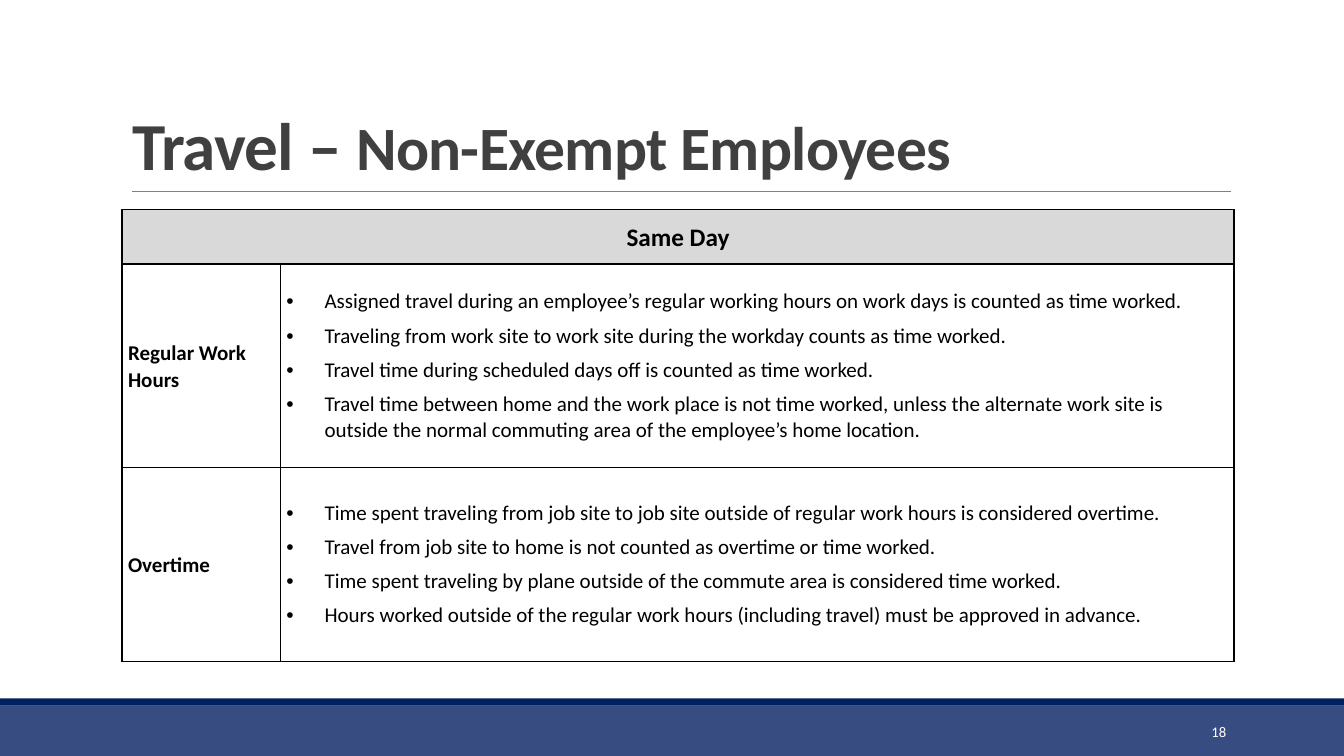
"""Builds the same-day travel slide for non-exempt employees."""
from dataclasses import dataclass

from lxml import etree
from pptx import Presentation
from pptx.dml.color import RGBColor
from pptx.enum.shapes import MSO_CONNECTOR, MSO_SHAPE
from pptx.enum.text import MSO_ANCHOR, MSO_AUTO_SIZE, PP_ALIGN
from pptx.oxml.ns import qn
from pptx.util import Inches, Pt

LEFT, CENTER, RIGHT = PP_ALIGN.LEFT, PP_ALIGN.CENTER, PP_ALIGN.RIGHT
MIDDLE, BOTTOM = MSO_ANCHOR.MIDDLE, MSO_ANCHOR.BOTTOM
RECTANGLE, STRAIGHT = MSO_SHAPE.RECTANGLE, MSO_CONNECTOR.STRAIGHT
NO_AUTOFIT = MSO_AUTO_SIZE.NONE
TITLE_ONLY = 5


@dataclass(frozen=True)
class Theme:
    font: str = "Calibri"
    title_color: str = "404040"
    text_color: str = "000000"
    number_color: str = "FFFFFF"
    header_fill: str = "D9D9D9"
    footer_fill: str = "374C81"
    stripe_fill: str = "002060"
    rule_color: str = "808080"
    border_color: str = "000000"
    topic_size: float = 48
    title_size: float = 44
    header_size: float = 18
    body_size: float = 15
    number_size: float = 10.5


class SlideBuilder:
    def __init__(self, slide, theme):
        self.slide = slide
        self.theme = theme

    def style(self, run, size, color, bold=False):
        run.font.name = self.theme.font
        run.font.size = Pt(size)
        run.font.bold = bold
        run.font.color.rgb = RGBColor.from_string(color)

    def band(self, top, height, color):
        band = self.slide.shapes.add_shape(
            RECTANGLE, 0, Inches(top), Inches(13.33), Inches(height))
        band.shadow.inherit = False
        band.fill.solid()
        band.fill.fore_color.rgb = RGBColor.from_string(color)
        band.line.fill.background()

    def rule(self, left, right, top):
        rule = self.slide.shapes.add_connector(
            STRAIGHT, Inches(left), Inches(top), Inches(right), Inches(top))
        rule.line.color.rgb = RGBColor.from_string(self.theme.rule_color)
        rule.line.width = Pt(0.5)
        etree.SubElement(rule._element.spPr, qn("a:effectLst"))

    def title(self, topic, audience):
        title = self.slide.shapes.title
        title.left, title.top = Inches(1.21), Inches(1)
        title.width, title.height = Inches(11.5), Inches(0.88)
        frame = title.text_frame
        frame.auto_size = NO_AUTOFIT
        frame.vertical_anchor = BOTTOM
        heading = frame.paragraphs[0]
        heading.alignment = LEFT
        heading.line_spacing = 0.85
        sizes = (self.theme.topic_size, self.theme.title_size)
        for wording, size in zip((topic, audience), sizes):
            run = heading.add_run()
            run.text = wording
            self.style(run, size, self.theme.title_color, bold=True)
            run.font._element.set("spc", "-50")

    def page_number(self, number):
        box = self.slide.shapes.add_textbox(
            Inches(10.83), Inches(7.06), Inches(1.43), Inches(0.4))
        frame = box.text_frame
        frame.word_wrap = True
        frame.vertical_anchor = MIDDLE
        frame.text = number
        frame.paragraphs[0].alignment = RIGHT
        self.style(frame.paragraphs[0].runs[0], self.theme.number_size,
                   self.theme.number_color)

    def borders(self, cell):
        properties = cell._tc.get_or_add_tcPr()
        for side in ("a:lnL", "a:lnR", "a:lnT", "a:lnB"):
            line = etree.SubElement(properties, qn(side), w=str(Pt(1)))
            fill = etree.SubElement(line, qn("a:solidFill"))
            etree.SubElement(fill, qn("a:srgbClr"), val=self.theme.border_color)

    def bullet(self, paragraph):
        paragraph.space_before = Pt(6)
        properties = paragraph._p.get_or_add_pPr()
        properties.set("marL", str(Inches(0.38)))
        properties.set("indent", str(-Inches(0.38)))
        etree.SubElement(properties, qn("a:buFont"), typeface="Arial")
        etree.SubElement(properties, qn("a:buChar"), char="•")

    def fill_cell(self, cell, lines, size, bold=False, bulleted=False,
                  alignment=LEFT):
        cell.text_frame.text = "\n".join(lines)
        for paragraph in cell.text_frame.paragraphs:
            paragraph.alignment = alignment
            if bulleted:
                self.bullet(paragraph)
            else:
                paragraph.line_spacing = 1.07
            self.style(paragraph.runs[0], size, self.theme.text_color, bold)

    def policy_table(self, heading, policies, widths, heights):
        frame = self.slide.shapes.add_table(
            len(heights), len(widths), Inches(1.21), Inches(2.08),
            Inches(sum(widths)), Inches(sum(heights)))
        table = frame.table
        table.first_row = table.horz_banding = False
        for column, width in zip(table.columns, widths):
            column.width = Inches(width)
        for row, height in zip(table.rows, heights):
            row.height = Inches(height)
        for cell in table.iter_cells():
            cell.margin_left = cell.margin_right = Inches(0.06)
            cell.margin_top = cell.margin_bottom = 0
            cell.vertical_anchor = MIDDLE
            self.borders(cell)
            cell.fill.background()

        header = table.cell(0, 0)
        header.merge(table.cell(0, len(widths) - 1))
        header.fill.solid()
        header.fill.fore_color.rgb = RGBColor.from_string(self.theme.header_fill)
        self.fill_cell(header, [heading], self.theme.header_size, bold=True,
                       alignment=CENTER)
        for row, (period, rules) in enumerate(policies.items(), start=1):
            self.fill_cell(table.cell(row, 0), [period], self.theme.body_size,
                           bold=True)
            self.fill_cell(table.cell(row, 1), rules, self.theme.body_size,
                           bulleted=True)


POLICIES = {
    "Regular Work Hours": [
        "Assigned travel during an employee’s regular working hours on work "
        "days is counted as time worked.",
        "Traveling from work site to work site during the workday counts as "
        "time worked.",
        "Travel time during scheduled days off is counted as time worked.",
        "Travel time between home and the work place is not time worked, "
        "unless the alternate work site is outside the normal commuting area "
        "of the employee’s home location.",
    ],
    "Overtime": [
        "Time spent traveling from job site to job site outside of regular "
        "work hours is considered overtime.",
        "Travel from job site to home is not counted as overtime or time "
        "worked.",
        "Time spent traveling by plane outside of the commute area is "
        "considered time worked.",
        "Hours worked outside of the regular work hours (including travel) "
        "must be approved in advance.",
    ],
}


def main():
    deck = Presentation()
    deck.slide_width, deck.slide_height = Inches(13.33), Inches(7.5)
    theme = Theme()
    slide = deck.slides.add_slide(deck.slide_layouts[TITLE_ONLY])
    builder = SlideBuilder(slide, theme)
    builder.band(7, 0.5, theme.footer_fill)
    builder.band(6.93, 0.07, theme.stripe_fill)
    builder.rule(1.31, 12.21, 1.9)
    builder.title("Travel – ", "Non-Exempt Employees")
    builder.policy_table("Same Day", POLICIES, widths=(1.57, 9.46),
                         heights=(0.54, 2.02, 1.92))
    builder.page_number("18")
    deck.save("out.pptx")


if __name__ == "__main__":
    main()
